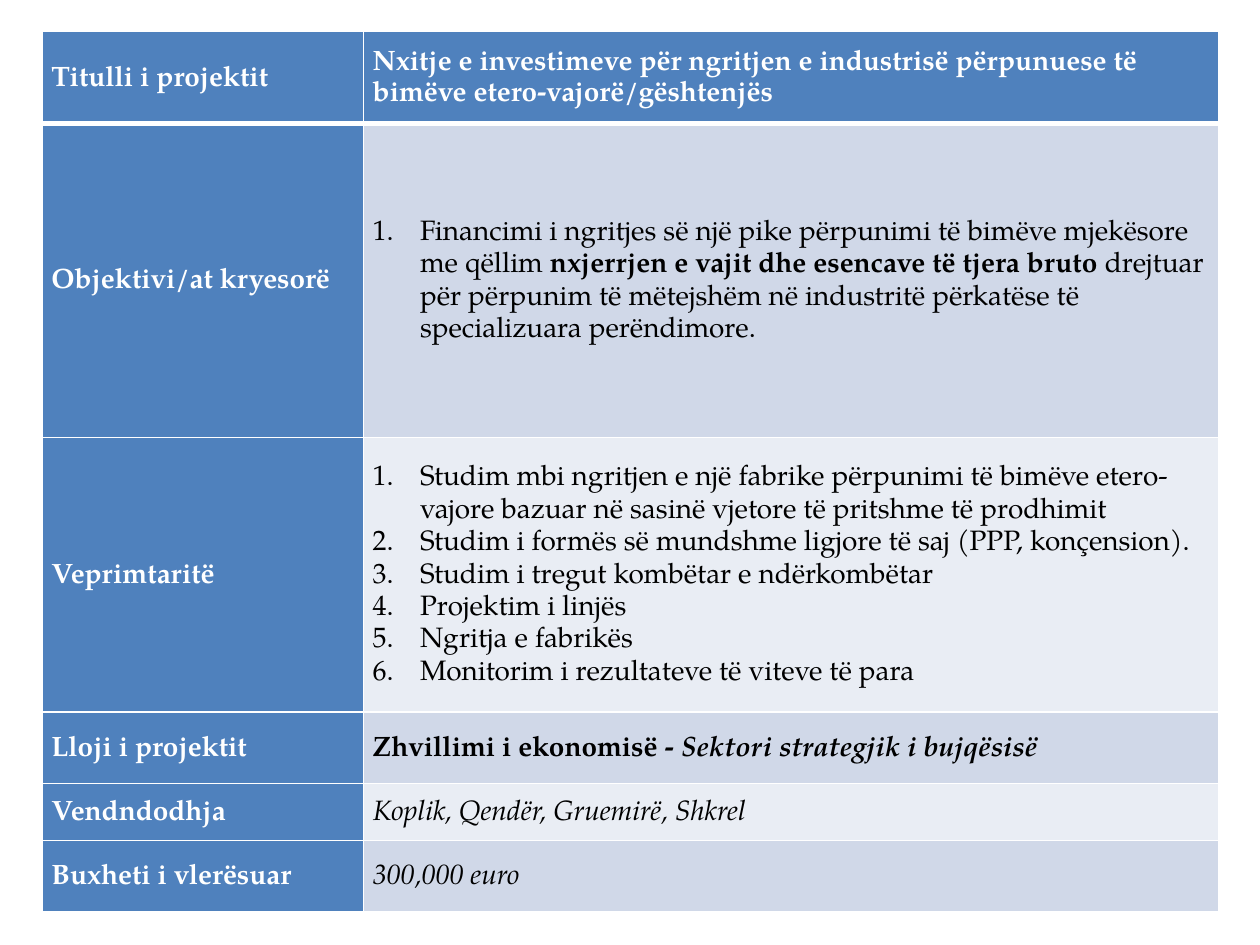
"""Build a one-slide project sheet as a two-column table."""
import lxml.etree
import pptx
import pptx.dml.color
import pptx.enum.text
import pptx.oxml.ns
import pptx.util

Pt = pptx.util.Pt
RGB = pptx.dml.color.RGBColor
qn = pptx.oxml.ns.qn

WHITE = RGB(0xFF, 0xFF, 0xFF)
BLACK = RGB(0x00, 0x00, 0x00)
BLUE = RGB(0x4F, 0x81, 0xBD)
DARK = RGB(0xD0, 0xD8, 0xE8)
LIGHT = RGB(0xE9, 0xED, 0xF4)

COLS = [183.6, 488.6]
ROWS = [
    (52.6, "Titulli i projektit",
     [[("Nxitje e investimeve për ngritjen e industrisë përpunuese të "
        "bimëve etero-vajorë/gështenjës", "b")]], False),
    (179.3, "Objektivi/at kryesorë",
     [[("Financimi i ngritjes së një pike përpunimi të bimëve mjekësore "
        "me qëllim ", ""),
       ("nxjerrjen e vajit dhe esencave të tjera bruto ", "b"),
       ("drejtuar për përpunim të mëtejshëm në industritë përkatëse të "
        "specializuara perëndimore.", "")]], True),
    (157, "Veprimtaritë",
     [[(step, "")] for step in (
         "Studim mbi ngritjen e një fabrike përpunimi të bimëve "
         "etero-vajore bazuar në sasinë vjetore të pritshme të prodhimit",
         "Studim i formës së mundshme ligjore të saj (PPP, konçension).",
         "Studim i tregut kombëtar e ndërkombëtar",
         "Projektim i linjës",
         "Ngritja e fabrikës",
         "Monitorim i rezultateve të viteve të para")], True),
    (41, "Lloji i projektit",
     [[("Zhvillimi i ekonomisë -", "b"),
       (" Sektori strategjik i bujqësisë", "bi")]], False),
    (32.4, "Vendndodhja",
     [[("Koplik, Qendër, Gruemirë, Shkrel", "i")]], False),
    (41, "Buxheti i vlerësuar", [[("300,000 euro", "i")]], False),
]


class Sheet:
    """Hold the text style and the current slide."""

    face = "TeX Gyre Pagella"
    size = 16
    lead = 1.15
    hang = 27
    pad = 5.4

    def __init__(self, slide):
        """Keep the slide to draw on."""
        self.slide = slide

    def table(self, left, top, cols, highs):
        """Add a plain table with the given column widths and row heights."""
        frame = self.slide.shapes.add_table(
            len(highs), len(cols), Pt(left), Pt(top),
            Pt(sum(cols)), Pt(sum(highs)))
        grid = frame.table
        grid.first_row = grid.horz_banding = False
        for col, wide in zip(grid.columns, cols):
            col.width = Pt(wide)
        for row, high in zip(grid.rows, highs):
            row.height = Pt(high)
        return grid

    def cell(self, cell, paras, fill, color, edges, listed=False):
        """Fill one cell with styled paragraphs."""
        cell.margin_left = cell.margin_right = Pt(self.pad)
        cell.margin_top = cell.margin_bottom = 0
        cell.vertical_anchor = pptx.enum.text.MSO_ANCHOR.MIDDLE
        self.border(cell, edges)
        cell.fill.solid()
        cell.fill.fore_color.rgb = fill
        frame = cell.text_frame
        for spot, runs in enumerate(paras):
            para = frame.add_paragraph() if spot else frame.paragraphs[0]
            self.para(para, runs, color, listed)

    def border(self, cell, edges):
        """Draw white cell borders of the given widths."""
        props = cell._tc.get_or_add_tcPr()
        for side, wide in edges.items():
            line = lxml.etree.SubElement(
                props, qn("a:ln" + side), w=str(Pt(wide)))
            paint = lxml.etree.SubElement(line, qn("a:solidFill"))
            lxml.etree.SubElement(paint, qn("a:srgbClr"), val=str(WHITE))

    def para(self, para, runs, color, listed):
        """Write the runs of one paragraph, numbered if listed."""
        if listed:
            props = para._p.get_or_add_pPr()
            props.set("marL", str(Pt(self.hang)))
            props.set("indent", str(Pt(-self.hang)))
            lxml.etree.SubElement(
                props, qn("a:buAutoNum"), type="arabicPeriod")
        para.line_spacing = self.lead
        font = para.font
        font.name, font.size = self.face, Pt(self.size)
        font.color.rgb = color
        styles = {style for _, style in runs}
        if len(styles) == 1:
            self.mark(font, runs[0][1])
        for text, style in runs:
            run = para.add_run()
            run.text = text
            if len(styles) > 1:
                self.mark(run.font, style)

    def mark(self, font, style):
        """Set bold and italic from the style letters."""
        font.bold = "b" in style
        font.italic = "i" in style


def main():
    """Build and save the deck."""
    deck = pptx.Presentation()
    deck.slide_width, deck.slide_height = Pt(720), Pt(540)
    sheet = Sheet(deck.slides.add_slide(deck.slide_layouts[6]))
    grid = sheet.table(24, 18, COLS, [row[0] for row in ROWS])
    for spot, (_, label, paras, listed) in enumerate(ROWS):
        edges = {"L": 1, "R": 1, "T": 3 if spot == 1 else 1,
                 "B": 1 if spot else 3}
        fill = (DARK if spot % 2 else LIGHT) if spot else BLUE
        color = BLACK if spot else WHITE
        sheet.cell(grid.cell(spot, 0), [[(label, "b")]], BLUE, WHITE, edges)
        sheet.cell(grid.cell(spot, 1), paras, fill, color, edges, listed)
    deck.save("out.pptx")


if __name__ == "__main__":
    main()
